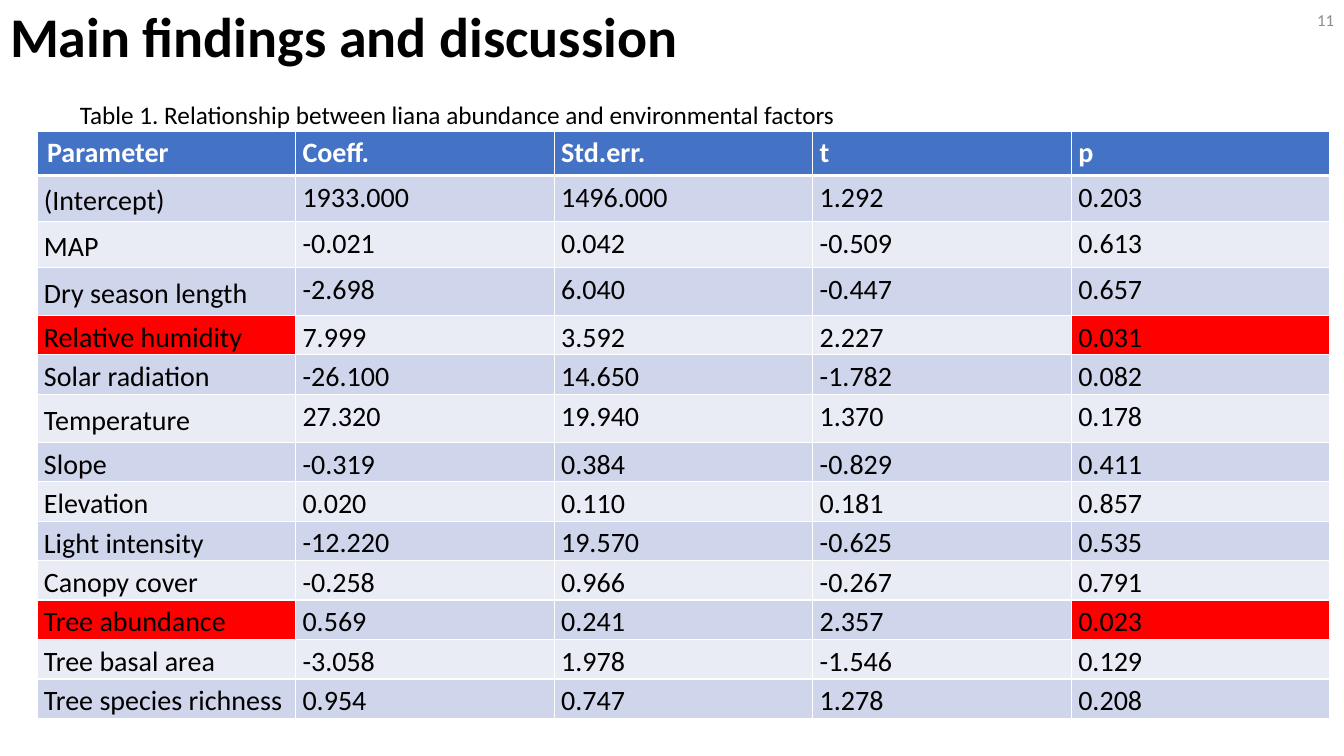
from lxml.etree import SubElement
from pptx import Presentation
from pptx.dml.color import RGBColor
from pptx.enum.text import MSO_ANCHOR, PP_ALIGN
from pptx.oxml.ns import qn
from pptx.util import Emu, Pt

FONT = "Calibri"
BLACK, WHITE, RED, BLUE = "000000", "FFFFFF", "FF0000", "4472C4"
BANDS = ("CFD5EA", "E9EBF5")

HEADER = ("Parameter", "Coeff.", "Std.err.", "t", "p")
# Row height in px, then the values of the row
FACTORS = [
    (46, "(Intercept)", "1933.000", "1496.000", "1.292", "0.203"),
    (46, "MAP", "-0.021", "0.042", "-0.509", "0.613"),
    (48, "Dry season length", "-2.698", "6.040", "-0.447", "0.657"),
    (39, "Relative humidity", "7.999", "3.592", "2.227", "0.031"),
    (39, "Solar radiation", "-26.100", "14.650", "-1.782", "0.082"),
    (48, "Temperature", "27.320", "19.940", "1.370", "0.178"),
    (39, "Slope", "-0.319", "0.384", "-0.829", "0.411"),
    (39, "Elevation", "0.020", "0.110", "0.181", "0.857"),
    (39, "Light intensity", "-12.220", "19.570", "-0.625", "0.535"),
    (39, "Canopy cover", "-0.258", "0.966", "-0.267", "0.791"),
    (39, "Tree abundance", "0.569", "0.241", "2.357", "0.023"),
    (39, "Tree basal area", "-3.058", "1.978", "-1.546", "0.129"),
    (39, "Tree species richness", "0.954", "0.747", "1.278", "0.208"),
]


def px(n):
    return Emu(round(n * 914400 / 100.8))


def rgb(value):
    return RGBColor.from_string(value)


def add_run(p, text, size, color, bold=False):
    r = p.add_run()
    r.text = text
    r.font.name = FONT
    r.font.size = Pt(size)
    r.font.bold = bold
    r.font.color.rgb = rgb(color)


def add_title(s, text):
    title = s.shapes.title
    title.left, title.top, title.width, title.height = px(0), px(-15), px(1368), px(109)
    title.text_frame.vertical_anchor = MSO_ANCHOR.MIDDLE
    p = title.text_frame.paragraphs[0]
    p.alignment = PP_ALIGN.LEFT
    p.line_spacing = 0.9
    add_run(p, text, 40, BLACK, bold=True)


def add_label(s, box, text, size, color, align=PP_ALIGN.LEFT, anchor=MSO_ANCHOR.TOP, wrap=True):
    tf = s.shapes.add_textbox(*map(px, box)).text_frame
    tf.word_wrap = wrap
    tf.vertical_anchor = anchor
    p = tf.paragraphs[0]
    p.alignment = align
    add_run(p, text, size, color)


def set_borders(cell, top, bottom):
    tc_pr = cell._tc.get_or_add_tcPr()
    for side, width in (("L", 1), ("R", 1), ("T", top), ("B", bottom)):
        ln = SubElement(tc_pr, qn(f"a:ln{side}"), w=str(Pt(width)))
        fill = SubElement(ln, qn("a:solidFill"))
        SubElement(fill, qn("a:srgbClr"), val=WHITE)


def fill_cell(cell, text, fill, color, bold=False, tight=True, top=1, bottom=1):
    set_borders(cell, top, bottom)
    cell.fill.solid()
    cell.fill.fore_color.rgb = rgb(fill)
    p = cell.text_frame.paragraphs[0]
    if tight:
        cell.margin_left = cell.margin_right = px(7)
        cell.margin_top = cell.margin_bottom = 0
        p.line_spacing = 1.15
        p.space_after = Pt(10)
    add_run(p, text, 20, color, bold)


def add_factor_table(s):
    frame = s.shapes.add_table(len(FACTORS) + 1, len(HEADER), px(37), px(131), px(1293), px(585))
    table = frame.table

    # Header row
    table.rows[0].height = px(44)
    for col, text in enumerate(HEADER):
        fill_cell(table.cell(0, col), text, BLUE, WHITE, bold=True, tight=col > 0, bottom=3)

    # Banded rows, with name and p value in red where p < 0.05
    for row, (height, *values) in enumerate(FACTORS, 1):
        table.rows[row].height = px(height)
        significant = float(values[-1]) < 0.05
        for col, text in enumerate(values):
            cell = table.cell(row, col)
            marked = significant and col in (0, len(HEADER) - 1)
            fill = RED if marked else BANDS[(row - 1) % 2]
            fill_cell(cell, text, fill, BLACK, top=3 if row == 1 else 1)
            if col == 0:
                cell.vertical_anchor = MSO_ANCHOR.MIDDLE


def main():
    prs = Presentation()
    prs.slide_width, prs.slide_height = px(1344), px(756)
    s = prs.slides.add_slide(prs.slide_layouts[5])

    add_title(s, "Main findings and discussion")
    add_factor_table(s)
    # Slide number
    add_label(s, (1041, 0, 303, 40), "11", 12, "8C8C8C", PP_ALIGN.RIGHT, MSO_ANCHOR.MIDDLE)
    # Table caption
    add_label(s, (70, 94, 784, 40),
              "Table 1. Relationship between liana abundance and environmental factors",
              18, BLACK, wrap=False)
    prs.save("out.pptx")


if __name__ == "__main__":
    main()
